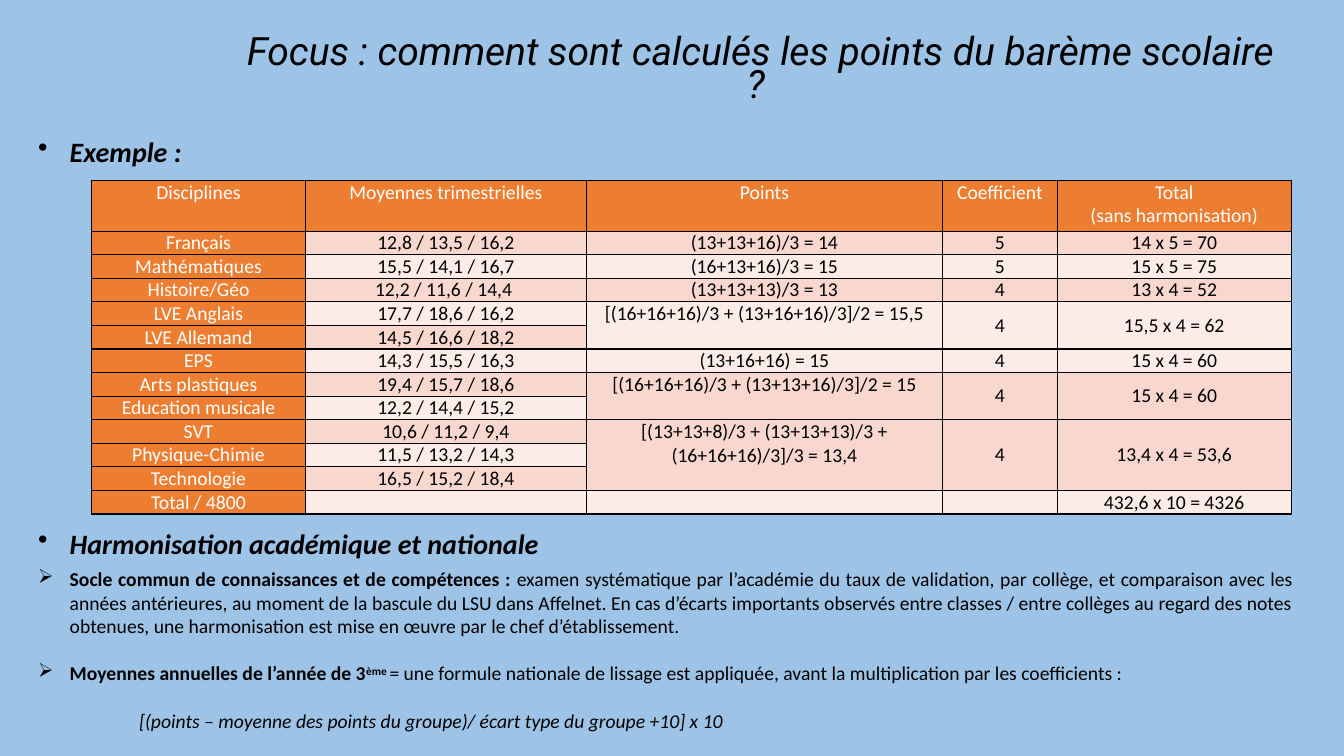
from pptx import Presentation
from pptx.dml.color import RGBColor
from pptx.enum import text as t
from pptx.oxml import parse_xml
from pptx.oxml.ns import nsdecls
from pptx.util import Pt

HUES = {"sky": "9DC3E6", "ink": "000000", "white": "FFFFFF",
        "head": "ED7D31", "odd": "F8D7CE", "even": "FCECE8"}
ALIGN = t.PP_ALIGN

COLS = [152.6, 200.9, 254.2, 82.1, 167]
HEAD = ["Disciplines", "Moyennes trimestrielles", "Points", "Coefficient",
        "Total\n(sans harmonisation)"]
# Each group: its subjects with their marks, then the cells they share.
GROUPS = [
    ([("Français", "12,8 / 13,5 / 16,2")],
     ["(13+13+16)/3 = 14", "5", "14 x 5 = 70"]),
    ([("Mathématiques", "15,5 / 14,1 / 16,7")],
     ["(16+13+16)/3 = 15", "5", "15 x 5 = 75"]),
    ([("Histoire/Géo", "12,2 / 11,6 / 14,4 ")],
     ["(13+13+13)/3 = 13", "4", "13 x 4 = 52"]),
    ([("LVE Anglais", "17,7 / 18,6 / 16,2"),
      ("LVE Allemand", "14,5 / 16,6 / 18,2")],
     ["[(16+16+16)/3 + (13+16+16)/3]/2 = 15,5", "4", "15,5 x 4 = 62"]),
    ([("EPS", "14,3 / 15,5 / 16,3")],
     ["(13+16+16) = 15", "4", "15 x 4 = 60"]),
    ([("Arts plastiques", "19,4 / 15,7 / 18,6"),
      ("Education musicale", "12,2 / 14,4 / 15,2")],
     ["[(16+16+16)/3 + (13+13+16)/3]/2 = 15", "4", "15 x 4 = 60"]),
    ([("SVT", "10,6 / 11,2 / 9,4"),
      ("Physique-Chimie", "11,5 / 13,2 / 14,3"),
      ("Technologie", "16,5 / 15,2 / 18,4")],
     ["[(13+13+8)/3 + (13+13+13)/3 + (16+16+16)/3]/3 = 13,4", "4",
      "13,4 x 4 = 53,6"]),
    ([("Total / 4800", "")], ["", "", "432,6 x 10 = 4326"]),
]

TOPIC = {"size": Pt(20), "bold": True, "italic": True}
PLAIN = {"size": Pt(14), "bold": False}
BOLD = {"size": Pt(14), "bold": True}
# Each paragraph: bullet, left margin, space before, runs.
BODY = [
    ("•", 22.5, 0, [("Exemple :", TOPIC)]),
    ("•", 22.5, 256.3, [("Harmonisation académique et nationale", TOPIC)]),
    ("➢", 22.5, 4.9, [
        ("Socle commun de connaissances et de compétences : ", BOLD),
        ("examen systématique par l’académie du taux de validation, par "
         "collège, et comparaison avec les années antérieures, au moment de "
         "la bascule du LSU dans Affelnet. En cas d’écarts importants "
         "observés entre classes / entre collèges au regard des notes "
         "obtenues, une harmonisation est mise en œuvre par le chef "
         "d’établissement.", PLAIN)]),
    ("➢", 22.5, 17, [
        ("Moyennes annuelles de l’année de 3", BOLD),
        ("ème ", {**BOLD, "raised": True}),
        ("= une formule nationale de lissage est appliquée, avant la "
         "multiplication par les coefficients :", PLAIN)]),
    ("", 72, 17, [
        ("[(points – moyenne des points du groupe)/ écart type du groupe "
         "+10] x 10", {**PLAIN, "italic": True})]),
]


def rgb(hue):
    return RGBColor.from_string(HUES[hue])


def write(para, words, look, hue="ink", face="Calibri"):
    run = para.add_run()
    run.text = words
    run.font.name = face
    run.font.color.rgb = rgb(hue)
    for key, val in look.items():
        if key == "raised":
            run._r.get_or_add_rPr().set("baseline", "30000")
        else:
            setattr(run.font, key, val)


def frame(slide, box):
    tf = slide.shapes.add_textbox(*map(Pt, box)).text_frame
    tf.word_wrap = True
    return tf


def title(slide, box):
    tf = frame(slide, box)
    tf.vertical_anchor = t.MSO_ANCHOR.BOTTOM
    para = tf.paragraphs[0]
    para.alignment = ALIGN.CENTER
    para.line_spacing = 0.7
    write(para, "Focus : comment sont calculés les points du barème scolaire ? ",
          {"size": Pt(27.9), "italic": True}, face="Roboto")


def body(slide, box):
    tf = frame(slide, box)
    for num, (mark, left, gap, runs) in enumerate(BODY):
        para = tf.add_paragraph() if num else tf.paragraphs[0]
        para.alignment = ALIGN.JUSTIFY
        if gap:
            para.space_before = Pt(gap)
        props = para._p.get_or_add_pPr()
        props.set("marL", str(Pt(left)))
        if mark:
            props.set("indent", str(-Pt(left)))
            props.append(parse_xml(
                f'<a:buChar {nsdecls("a")} char="{mark}"/>'))
        for words, look in runs:
            write(para, words, look)


def border(cell):
    props = cell._tc.get_or_add_tcPr()
    for side in "LRTB":
        props.append(parse_xml(
            f'<a:ln{side} {nsdecls("a")} w="12700"><a:solidFill>'
            f'<a:srgbClr val="{HUES["ink"]}"/></a:solidFill></a:ln{side}>'))


def fill(cell, words, back, hue, mid=False):
    border(cell)
    cell.fill.solid()
    cell.fill.fore_color.rgb = rgb(back)
    form = {"margin_left": Pt(5), "margin_right": Pt(5), "margin_top": 0,
            "margin_bottom": 0, "vertical_anchor":
            t.MSO_ANCHOR.MIDDLE if mid else t.MSO_ANCHOR.TOP}
    for key, val in form.items():
        setattr(cell, key, val)
    for num, line in enumerate(words.split("\n")):
        tf = cell.text_frame
        para = tf.add_paragraph() if num else tf.paragraphs[0]
        para.alignment = ALIGN.CENTER
        if line:
            write(para, line, PLAIN, hue)
        else:
            para._p.append(parse_xml(
                f'<a:endParaRPr {nsdecls("a")} sz="1400"/>'))


def marks(slide, box):
    """Table of marks, with shared cells merged over each group."""
    rows = [HEAD]
    spans = []
    for names, shared in GROUPS:
        spans.append((len(rows), len(names)))
        for num, pair in enumerate(names):
            rows.append([*pair, *(shared if num == 0 else [""] * 3)])
    table = slide.shapes.add_table(len(rows), len(COLS), *map(Pt, box)).table
    table.first_row = table.horz_banding = False
    for col, wide in zip(table.columns, COLS):
        col.width = Pt(wide)
    tall = {top for top, size in spans if size > 1}
    band = "head"
    for r, row in enumerate(rows):
        table.rows[r].height = Pt(15.9 if r else 36.2)
        band = "odd" if r % 2 else "even"
        for c, words in enumerate(row):
            lead = r == 0 or c == 0
            fill(table.cell(r, c), words, "head" if lead else band,
                 "white" if lead else "ink", r in tall and c > 2)
    for top, size in spans:
        if size > 1:
            for c in range(2, len(COLS)):
                table.cell(top, c).merge(table.cell(top + size - 1, c))


def main():
    deck = Presentation()
    deck.slide_width, deck.slide_height = Pt(960), Pt(540)
    slide = deck.slides.add_slide(deck.slide_layouts[6])
    slide.background.fill.solid()
    slide.background.fill.fore_color.rgb = rgb("sky")
    body(slide, (20.2, 92.2, 910.8, 458))
    title(slide, (167.8, 23, 751, 55.4))
    marks(slide, (65.5, 128.9, sum(COLS), 227))
    deck.save("out.pptx")


if __name__ == "__main__":
    main()
